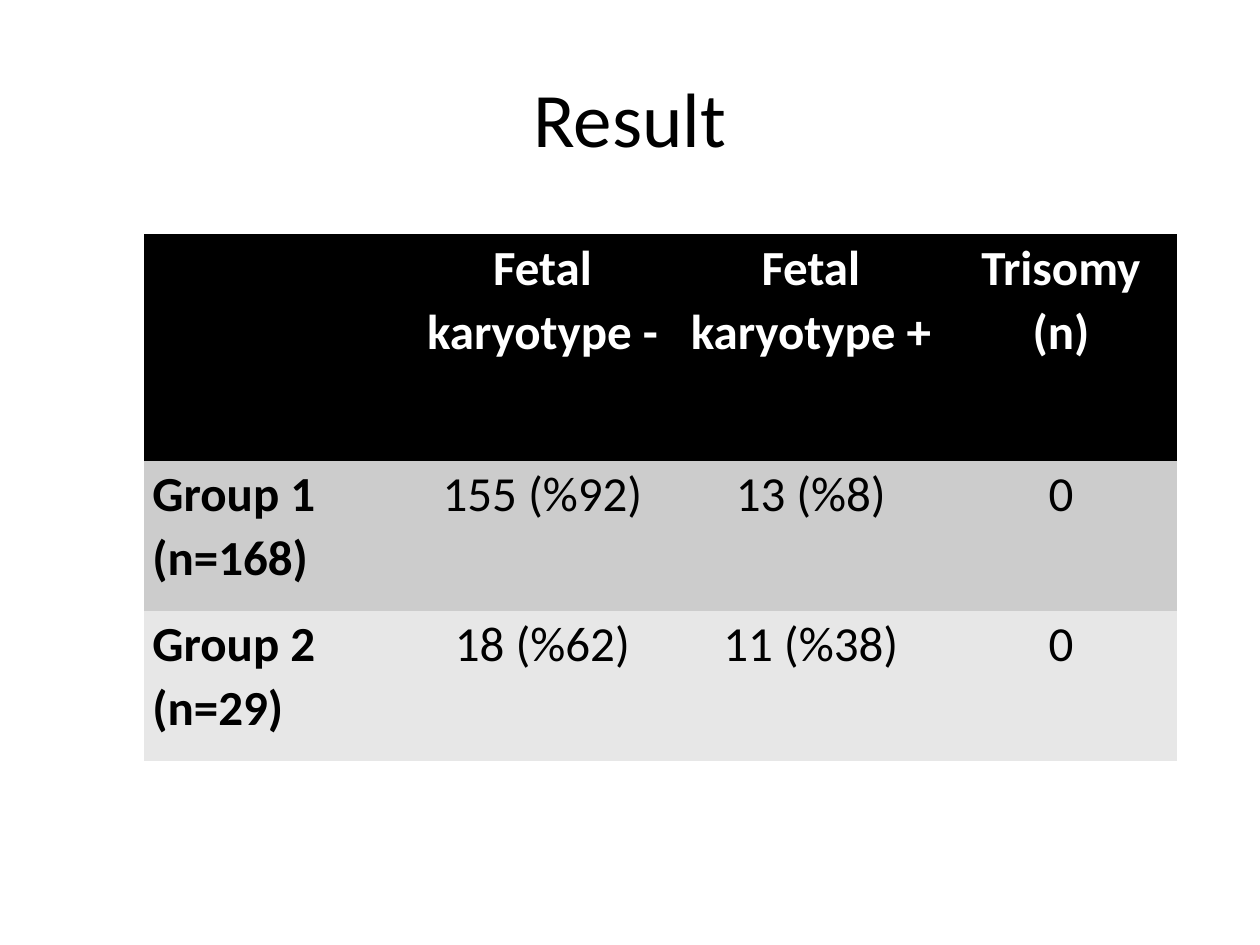
import pptx
import pptx.util
import pptx.dml.color
import pptx.enum.text
from pptx.util import Inches

BLACK = pptx.dml.color.RGBColor(0x00, 0x00, 0x00)
WHITE = pptx.dml.color.RGBColor(0xFF, 0xFF, 0xFF)
GREY = pptx.dml.color.RGBColor(0xCC, 0xCC, 0xCC)
LIGHT_GREY = pptx.dml.color.RGBColor(0xE7, 0xE7, 0xE7)
FONT_NAME = "Calibri"
NO_GRID_STYLE = "{2D5ABB26-0587-4C30-8999-92F81FD0307C}"

COLUMN_WIDTHS = [2.1, 2.13, 2.13, 1.84]
ROW_HEIGHTS = [1.8, 1.19, 1.19]
ROW_FILLS = [BLACK, GREY, LIGHT_GREY]
RESULTS = [
    ["", "Fetal karyotype -", "Fetal karyotype +", "Trisomy (n)"],
    ["Group 1 (n=168)", "155 (%92)", "13 (%8)", "0"],
    ["Group 2 (n=29)", "18 (%62)", "11 (%38)", "0"],
]


def write_paragraph(paragraph, text, size, color, bold=False, centered=True):
    paragraph.text = text
    align = pptx.enum.text.PP_ALIGN
    paragraph.alignment = align.CENTER if centered else align.LEFT
    paragraph.font.name = FONT_NAME
    paragraph.font.size = pptx.util.Pt(size)
    paragraph.font.color.rgb = color
    paragraph.font.bold = bold


def add_title(slide, text):
    title = slide.shapes.add_textbox(Inches(0.5), Inches(0.3), Inches(9), Inches(1.25))
    title.text_frame.word_wrap = True
    title.text_frame.vertical_anchor = pptx.enum.text.MSO_ANCHOR.MIDDLE
    write_paragraph(title.text_frame.paragraphs[0], text, 44, BLACK)


def fill_cell(cell, text, fill, is_header, is_label):
    cell.fill.solid()
    cell.fill.fore_color.rgb = fill
    cell.margin_left = cell.margin_right = Inches(0.07)
    cell.margin_top = cell.margin_bottom = 0
    paragraph = cell.text_frame.paragraphs[0]
    write_paragraph(paragraph, text, 28, WHITE if is_header else BLACK,
                    bold=is_header or is_label, centered=not is_label)
    paragraph.line_spacing = 1.07


def add_results_table(slide):
    frame = slide.shapes.add_table(
        len(ROW_HEIGHTS), len(COLUMN_WIDTHS), Inches(1.14), Inches(1.86),
        Inches(sum(COLUMN_WIDTHS)), Inches(sum(ROW_HEIGHTS)))
    results = frame.table
    results._tbl.tblPr.find(pptx.oxml.ns.qn("a:tableStyleId")).text = NO_GRID_STYLE
    for column, width in zip(results.columns, COLUMN_WIDTHS):
        column.width = Inches(width)
    for row_index, (row, height) in enumerate(zip(results.rows, ROW_HEIGHTS)):
        row.height = Inches(height)
        for column_index, text in enumerate(RESULTS[row_index]):
            fill_cell(results.cell(row_index, column_index), text,
                      ROW_FILLS[row_index], row_index == 0, column_index == 0)


def main():
    presentation = pptx.Presentation()
    presentation.slide_width = Inches(10)
    presentation.slide_height = Inches(7.5)
    slide = presentation.slides.add_slide(presentation.slide_layouts[6])
    add_title(slide, "Result")
    add_results_table(slide)
    presentation.save("out.pptx")


if __name__ == "__main__":
    main()
